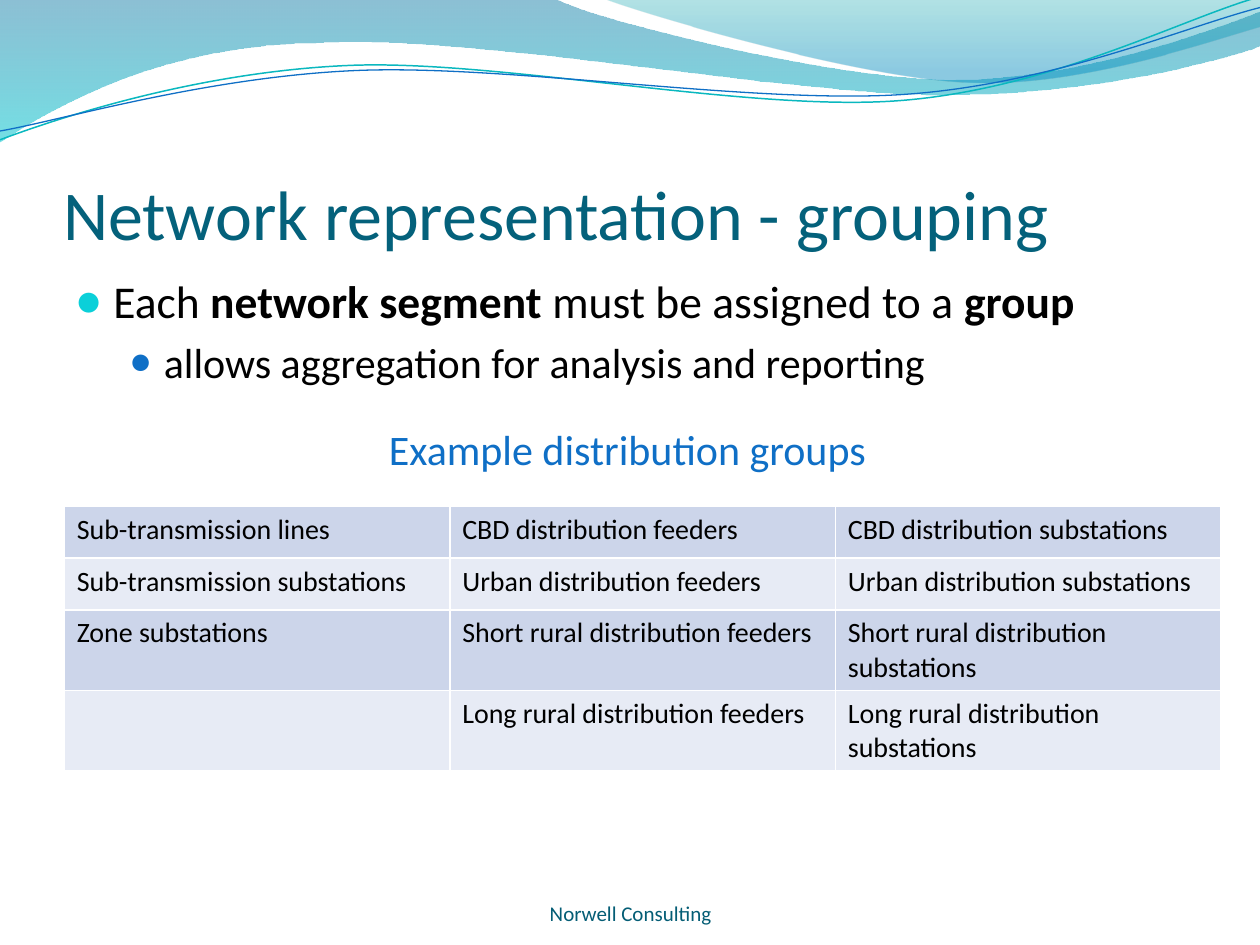
from lxml import etree
from pptx import Presentation
from pptx.dml.color import RGBColor
from pptx.enum.text import MSO_ANCHOR, MSO_AUTO_SIZE, PP_ALIGN
from pptx.oxml import parse_xml
from pptx.oxml.ns import qn
from pptx.util import Inches, Pt

FONT = "Calibri"
DRAWING_NS = 'xmlns:a="http://schemas.openxmlformats.org/drawingml/2006/main"'

TITLE = "Network representation - grouping"
CAPTION = "Example distribution groups"
FOOTER = "Norwell Consulting"

# Level, size, left margin, hanging indent, bullet colour, bullet percent, (text, bold) runs
BULLETS = [
    (0, 26, 0.3, 0.3, "0BD0D9", 95, [
        ("Each ", False), ("network segment ", True),
        ("must be assigned to a", False), (" group", True)]),
    (1, 24, 0.7, 0.27, "0F6FC6", 85, [
        ("allows aggregation for analysis and reporting", False)]),
]

GROUPS = [
    ("Sub-transmission lines", "CBD distribution feeders", "CBD distribution substations"),
    ("Sub-transmission substations", "Urban distribution feeders", "Urban distribution substations"),
    ("Zone substations", "Short rural distribution feeders", "Short rural distribution substations"),
    ("", "Long rural distribution feeders", "Long rural distribution substations"),
]
ROW_HEIGHTS = (0.41, 0.41, 0.64, 0.64)
BAND_COLORS = ("CCD5EA", "E7EBF5")

# An outline is a list of points (straight) and triples of points (Bezier curve).
# Gradient stops are (position, colour, opacity), all in percent.
WAVES = [
    ([(0, -0.01), (4.4, -0.01),
      ((4.76, 0.17), (6.64, 0.63), (7.58, 0.63)),
      ((8.53, 0.63), (9.58, 0.26), (10, 0.09)),
      (10.01, 0.36),
      ((9.83, 0.44), (8.7, 0.76), (7.46, 0.75)),
      ((6.22, 0.75), (3.82, 0.28), (2.57, 0.34)),
      ((1.29, 0.35), (0.46, 0.83), (-0.01, 1.13))],
     [(0, "0074A1", 45), (100, "00C6CF", 55)]),
    ([(4.79, -0.01),
      ((5.09, 0.11), (6.82, 0.62), (7.69, 0.65)),
      ((8.56, 0.69), (9.61, 0.32), (10, 0.21)),
      (10, 0)],
     [(0, "00A1A9", 30), (80, "008BBF", 45)]),
]
WAVE_LINES = [
    ([(0, 1.11),
      ((0.48, 0.93), (1.58, 0.57), (2.77, 0.52)),
      ((3.95, 0.47), (5.93, 0.89), (7.13, 0.8)),
      ((8.33, 0.71), (9.38, 0.15), (9.98, -0.02))], "0AB8BF", 0.85),
    ([(0, 1.04),
      ((0.47, 0.96), (1.64, 0.61), (2.83, 0.56)),
      ((4.03, 0.51), (5.97, 0.83), (7.17, 0.75)),
      ((8.36, 0.67), (9.41, 0.21), (10, 0.06))], "0F6FC6", 0.75),
]


def rgb(color):
    return RGBColor.from_string(color)


def add_outline(slide, outline, close):
    """Draw every point as a straight step, then merge each triple into one curve."""
    parts = [part if isinstance(part[0], tuple) else (part,) for part in outline]
    points = [(Inches(x), Inches(y)) for part in parts for x, y in part]
    builder = slide.shapes.build_freeform(*points[0])
    builder.add_line_segments(points[1:], close=close)
    shape = builder.convert_to_shape()
    shape.shadow.inherit = False

    steps = iter(list(shape.element.spPr.iter(qn("a:lnTo"))))
    for part in parts[1:]:
        first, *others = [next(steps) for _ in part]
        if others:
            curve = etree.Element(qn("a:cubicBezTo"))
            first.addprevious(curve)
            for step in (first, *others):
                curve.append(step[0])
                step.getparent().remove(step)
    return shape


def add_wave(slide, outline, stops):
    shape = add_outline(slide, outline, close=True)
    shape.line.fill.background()
    stop_xml = "".join(
        f'<a:gs pos="{position * 1000}"><a:srgbClr val="{color}">'
        f'<a:alpha val="{opacity * 1000}"/></a:srgbClr></a:gs>'
        for position, color, opacity in stops)
    gradient = parse_xml(f'<a:gradFill {DRAWING_NS} rotWithShape="1"><a:gsLst>{stop_xml}</a:gsLst>'
                         '<a:lin ang="5400000" scaled="0"/></a:gradFill>')
    shape.element.spPr.find(qn("a:custGeom")).addnext(gradient)


def add_wave_line(slide, outline, color, width):
    shape = add_outline(slide, outline, close=False)
    shape.fill.background()
    shape.line.color.rgb = rgb(color)
    shape.line.width = Pt(width)


def add_run(paragraph, text, size, color="000000", bold=False):
    run = paragraph.add_run()
    run.text = text
    font = run.font
    font.name, font.size, font.bold = FONT, Pt(size), bold
    font.color.rgb = rgb(color)


def place(shape, left, top, width, height):
    shape.left, shape.top, shape.width, shape.height = map(Inches, (left, top, width, height))


def set_bullet(paragraph, margin, hanging, color, percent):
    properties = paragraph._p.get_or_add_pPr()
    properties.set("marL", str(Inches(margin)))
    properties.set("indent", str(-Inches(hanging)))
    bullet_color = etree.SubElement(properties, qn("a:buClr"))
    etree.SubElement(bullet_color, qn("a:srgbClr"), val=color)
    etree.SubElement(properties, qn("a:buSzPct"), val=str(percent * 1000))
    etree.SubElement(properties, qn("a:buFont"), typeface=FONT)
    etree.SubElement(properties, qn("a:buChar"), char="●")


def add_centered_text(slide, box, text, size, color, anchor=MSO_ANCHOR.TOP, margin=None, before=0):
    shape = slide.shapes.add_textbox(*map(Inches, box))
    frame = shape.text_frame
    frame.word_wrap = True
    frame.vertical_anchor = anchor
    if margin is not None:
        frame.margin_left = frame.margin_right = Inches(margin)
        frame.margin_top = frame.margin_bottom = Inches(margin)
    paragraph = frame.paragraphs[0]
    paragraph.alignment = PP_ALIGN.CENTER
    paragraph.space_before = Pt(before)
    add_run(paragraph, text, size, color)


def set_borders(cell, color="FFFFFF", width=1):
    properties = cell._tc.get_or_add_tcPr()
    for index, side in enumerate(("lnL", "lnR", "lnT", "lnB")):
        properties.insert(index, parse_xml(
            f'<a:{side} {DRAWING_NS} w="{Pt(width)}"><a:solidFill>'
            f'<a:srgbClr val="{color}"/></a:solidFill></a:{side}>'))


def add_group_table(slide, left=0.51, top=4.02, width=9.18):
    table = slide.shapes.add_table(len(GROUPS), len(GROUPS[0]), Inches(left), Inches(top),
                                   Inches(width), Inches(sum(ROW_HEIGHTS))).table
    table.first_row = table.horz_banding = False
    for row, (texts, height) in enumerate(zip(GROUPS, ROW_HEIGHTS)):
        table.rows[row].height = Inches(height)
        for column, text in enumerate(texts):
            cell = table.cell(row, column)
            cell.fill.solid()
            cell.fill.fore_color.rgb = rgb(BAND_COLORS[row % 2])
            set_borders(cell)
            if text:
                add_run(cell.text_frame.paragraphs[0], text, 16)


def main():
    presentation = Presentation()
    presentation.slide_width, presentation.slide_height = Inches(10), Inches(7.5)
    slide = presentation.slides.add_slide(presentation.slide_layouts[1])
    title, body = slide.placeholders
    for wave in WAVES:
        add_wave(slide, *wave)
    for wave_line in WAVE_LINES:
        add_wave_line(slide, *wave_line)

    place(title, 0.5, 0.77, 9, 1.25)
    frame = title.text_frame
    frame.auto_size = MSO_AUTO_SIZE.NONE
    frame.vertical_anchor = MSO_ANCHOR.BOTTOM
    frame.margin_left = frame.margin_right = frame.margin_bottom = 0
    frame.paragraphs[0].alignment = PP_ALIGN.LEFT
    add_run(frame.paragraphs[0], TITLE, 40, "04617B")

    place(body, 0.5, 2.12, 9, 1.13)
    frame = body.text_frame
    frame.auto_size = MSO_AUTO_SIZE.NONE
    for index, (level, size, margin, hanging, color, percent, runs) in enumerate(BULLETS):
        paragraph = frame.add_paragraph() if index else frame.paragraphs[0]
        paragraph.level = level
        set_bullet(paragraph, margin, hanging, color, percent)
        for text, bold in runs:
            add_run(paragraph, text, size, bold=bold)

    add_centered_text(slide, (3.17, 6.95, 3.67, 0.4), FOOTER, 12, "045D75",
                      anchor=MSO_ANCHOR.BOTTOM, margin=0)
    add_centered_text(slide, (0.56, 3.31, 8.84, 0.69), CAPTION, 24, "0F6FC6", before=5)
    add_group_table(slide)
    presentation.save("out.pptx")


if __name__ == "__main__":
    main()
